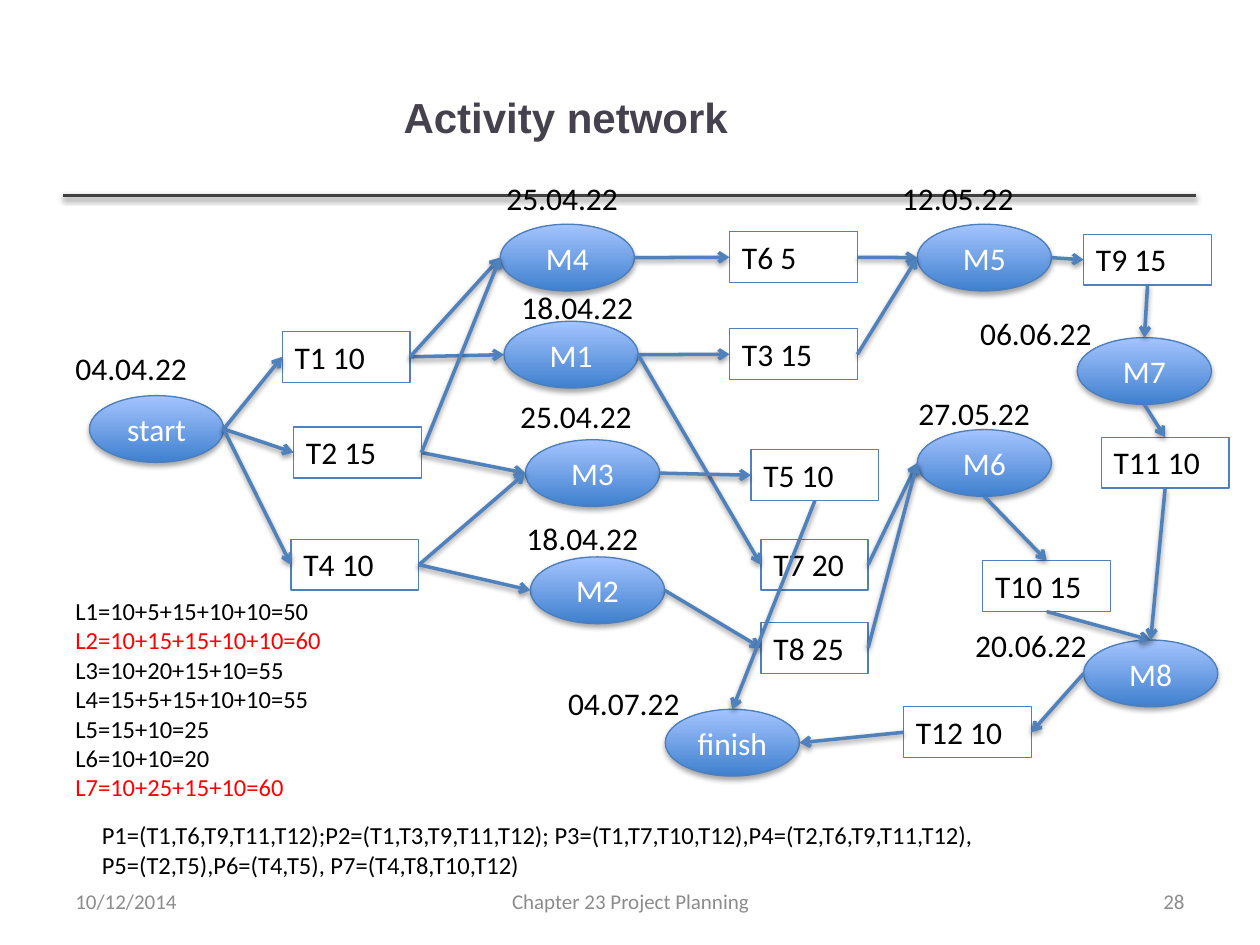
from dataclasses import dataclass

from lxml.etree import SubElement
from pptx import Presentation
from pptx.dml.color import RGBColor as RGB
from pptx.enum.shapes import MSO_CONNECTOR as Line, MSO_SHAPE as Shape
from pptx.enum.text import MSO_ANCHOR as Anchor, MSO_AUTO_SIZE as AutoSize, PP_ALIGN as Align
from pptx.oxml.ns import qn
from pptx.util import Inches, Pt

TOP, LEFT, BOTTOM, RIGHT = range(4)
COLS, ROWS = 100, 75


@dataclass(frozen=True)
class Theme:
    heading: str = "Arial"
    body: str = "Calibri"
    black: str = "000000"
    white: str = "FFFFFF"
    red: str = "FF0000"
    title: str = "46424D"
    footer: str = "8C8C8C"
    rule: str = "404040"
    blue: str = "4F81BD"
    oval_line: str = "4B7EBC"
    oval_low: str = "3F80CE"
    oval_high: str = "A4C4FF"
    title_size: int = 24
    node_size: int = 18
    note_size: int = 14
    footer_size: int = 12
    thick: float = 2
    thin: float = 0.75


class Diagram:
    """Places elements on a grid of 100 columns by 75 rows."""

    def __init__(self, prs, theme):
        self.theme = theme
        self.col = prs.slide_width / COLS
        self.row = prs.slide_height / ROWS
        self.s = prs.slides.add_slide(prs.slide_layouts[6])

    def box(self, x, y, w, h):
        return [round(v) for v in (x * self.col, y * self.row, w * self.col, h * self.row)]

    def fill_text(self, sp, text, size, color, align=Align.LEFT, anchor=Anchor.TOP,
                  font=None, bold=False):
        tf = sp.text_frame
        tf.text = text
        tf.word_wrap = True
        tf.auto_size = AutoSize.NONE
        tf.vertical_anchor = anchor
        for p in tf.paragraphs:
            p.alignment = align
            for r in p.runs:
                r.font.name = font or self.theme.body
                r.font.size, r.font.bold = Pt(size), bold
                r.font.color.rgb = RGB.from_string(color)

    def text(self, text, x, y, w, h, size, color=None, **style):
        sp = self.s.shapes.add_textbox(*self.box(x, y, w, h))
        self.fill_text(sp, text, size, color or self.theme.black, **style)
        return sp

    def date(self, text, x, y):
        self.text(text, x, y, 12.5, 4, self.theme.node_size)

    def shadow(self, sp, alpha, dist):
        effects = SubElement(sp._element.spPr, qn("a:effectLst"))
        outer = SubElement(effects, qn("a:outerShdw"), blurRad=str(Pt(3.1)),
                           dist=str(Pt(dist)), dir="5400000", rotWithShape="0")
        color = SubElement(outer, qn("a:srgbClr"), val=self.theme.black)
        SubElement(color, qn("a:alpha"), val=str(alpha * 1000))

    def stroke(self, sp, color, width):
        sp.line.color.rgb = RGB.from_string(color)
        sp.line.width = Pt(width)

    def milestone(self, text, x, y):
        t = self.theme
        sp = self.s.shapes.add_shape(Shape.OVAL, *self.box(x, y, 10.65, 5.3))
        sp.fill.gradient()
        sp.fill.gradient_angle = 90
        for stop, color in zip(sp.fill.gradient_stops, (t.oval_low, t.oval_high)):
            stop.color.rgb = RGB.from_string(color)
        self.stroke(sp, t.oval_line, t.thin)
        self.shadow(sp, 35, 1.8)
        self.fill_text(sp, text, t.node_size, t.white, Align.CENTER, Anchor.MIDDLE)
        return sp

    def task(self, text, x, y, w=10.15):
        t = self.theme
        sp = self.s.shapes.add_shape(Shape.RECTANGLE, *self.box(x, y, w, 4.04))
        sp.shadow.inherit = False
        sp.fill.background()
        self.stroke(sp, t.blue, t.thin)
        self.fill_text(sp, text, t.node_size, t.black)
        return sp

    def line(self, start, end, color):
        cx = self.s.shapes.add_connector(Line.STRAIGHT, *start, *end)
        self.stroke(cx, color, self.theme.thick)
        self.shadow(cx, 38, 1.6)
        return cx

    def side(self, sp, site):
        mid_x, mid_y = sp.left + sp.width // 2, sp.top + sp.height // 2
        return ((mid_x, sp.top), (sp.left, mid_y),
                (mid_x, sp.top + sp.height), (sp.left + sp.width, mid_y))[site]

    def link(self, a, b, out=RIGHT, into=LEFT):
        cx = self.line(self.side(a, out), self.side(b, into), self.theme.blue)
        SubElement(cx._element.spPr.find(qn("a:ln")), qn("a:tailEnd"), type="arrow")
        # Ovals number their joints differently, so only rectangles are joined
        if a.auto_shape_type == Shape.RECTANGLE:
            cx.begin_connect(a, out)
        if b.auto_shape_type == Shape.RECTANGLE:
            cx.end_connect(b, into)


MILESTONES = {
    "start": (7.1, 31.4), "M1": (40, 25.5), "M2": (42.1, 44.2), "M3": (41.7, 34.9),
    "M4": (39.7, 17.8), "M5": (72.8, 17.8), "M6": (72.8, 34.1), "M7": (85.5, 26.8),
    "M8": (86, 50.8), "finish": (52.8, 56.3),
}
TASKS = {
    "T1": (10, 22.4, 26.3), "T2": (15, 23.3, 33.9), "T4": (10, 23.1, 42.8),
    "T3": (15, 57.9, 26.1), "T5": (10, 59.6, 35.7), "T6": (5, 57.9, 18.4),
    "T7": (20, 60.4, 42.8, 8.5), "T8": (25, 60.4, 49.4, 8.5), "T9": (15, 86, 18.6),
    "T10": (15, 78, 44.5), "T11": (10, 87.4, 34.7), "T12": (10, 71.7, 56.1),
}
LINKS = [
    ("start", "T1"), ("start", "T2"), ("start", "T4"),
    ("T1", "M1"), ("T1", "M4"), ("T2", "M3"), ("T2", "M4"), ("T4", "M3"), ("T4", "M2"),
    ("M1", "T3"), ("M1", "T7"), ("M3", "T5"), ("M4", "T6"), ("M2", "T8"),
    ("T6", "M5"), ("T3", "M5"), ("T7", "M6"), ("T8", "M6"), ("M5", "T9"),
    ("M6", "T10", BOTTOM, TOP), ("T9", "M7", BOTTOM, TOP), ("M7", "T11", BOTTOM, TOP),
    ("T10", "M8", BOTTOM, TOP), ("T11", "M8", BOTTOM, TOP), ("T5", "finish", BOTTOM, TOP),
    ("M8", "T12", LEFT, RIGHT), ("T12", "finish", LEFT, RIGHT),
]
DATES = [
    ("04.04.22", 5, 27.2), ("25.04.22", 39.2, 13.7), ("18.04.22", 40.4, 22.4),
    ("25.04.22", 40.3, 31), ("18.04.22", 40.8, 40.7), ("12.05.22", 70.6, 13.7),
    ("06.06.22", 76.8, 24.4), ("27.05.22", 71.9, 30.8), ("20.06.22", 76.4, 49.2),
    ("04.07.22", 44.1, 53.8),
]
LENGTHS = ["L1=10+5+15+10+10=50", "L2=10+15+15+10+10=60", "L3=10+20+15+10=55",
           "L4=15+5+15+10+10=55", "L5=15+10=25", "L6=10+10=20", "L7=10+25+15+10=60"]
LONGEST = (1, 6)
PATHS = ("P1=(T1,T6,T9,T11,T12);P2=(T1,T3,T9,T11,T12); P3=(T1,T7,T10,T12),"
         "P4=(T2,T6,T9,T11,T12), P5=(T2,T5),P6=(T4,T5), P7=(T4,T8,T10,T12)")
FOOTER = [("10/12/2014", 5, 23.3, Align.LEFT),
          ("Chapter 23 Project Planning", 34.2, 31.7, Align.CENTER),
          ("28", 71.7, 23.3, Align.RIGHT)]


def main():
    prs = Presentation()
    prs.slide_width, prs.slide_height = Inches(10), Inches(7.5)
    theme = Theme()
    d = Diagram(prs, theme)

    # Title, rule and footer
    d.line(d.box(5, 15.5, 0, 0)[:2], d.box(94.9, 15.5, 0, 0)[:2], theme.rule)
    d.text("Activity network", 5, 3, 79.8, 12.5, theme.title_size, theme.title,
           align=Align.CENTER, anchor=Anchor.MIDDLE, font=theme.heading, bold=True)
    for text, x, w, align in FOOTER:
        d.text(text, x, 69.5, w, 4, theme.footer_size, theme.footer,
               align=align, anchor=Anchor.MIDDLE)

    # Network: milestones, tasks with their days, and arrows
    nodes = {name: d.milestone(name, *at) for name, at in MILESTONES.items()}
    for name, (days, *at) in TASKS.items():
        nodes[name] = d.task(f"{name} {days}", *at)
    for a, b, *sides in LINKS:
        d.link(nodes[a], nodes[b], *sides)
    for date in DATES:
        d.date(*date)

    # Paths and their lengths, the longest in red
    d.text(PATHS, 7.1, 64.6, 84, 5.7, theme.note_size)
    sp = d.text("\n".join(LENGTHS), 5, 46.8, 23.3, 17.5, theme.note_size)
    for i in LONGEST:
        sp.text_frame.paragraphs[i].runs[0].font.color.rgb = RGB.from_string(theme.red)

    prs.save("out.pptx")


if __name__ == "__main__":
    main()
